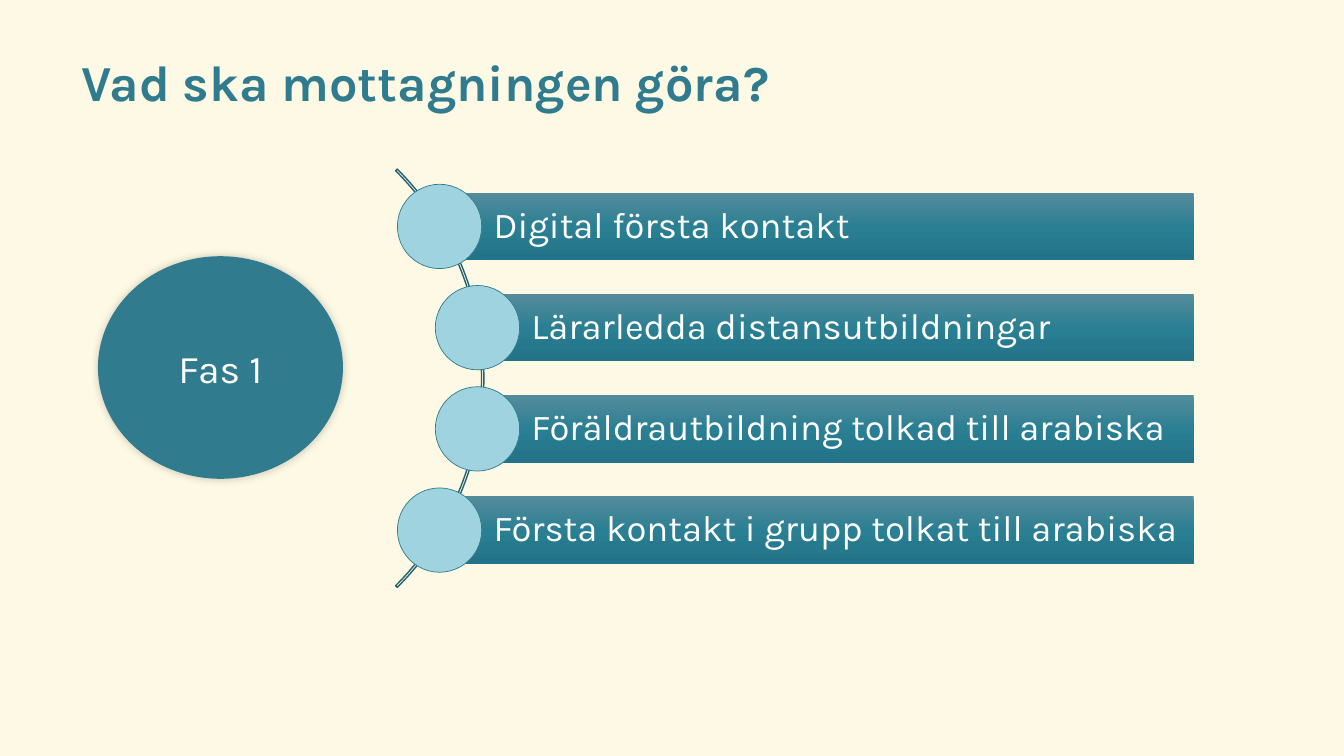
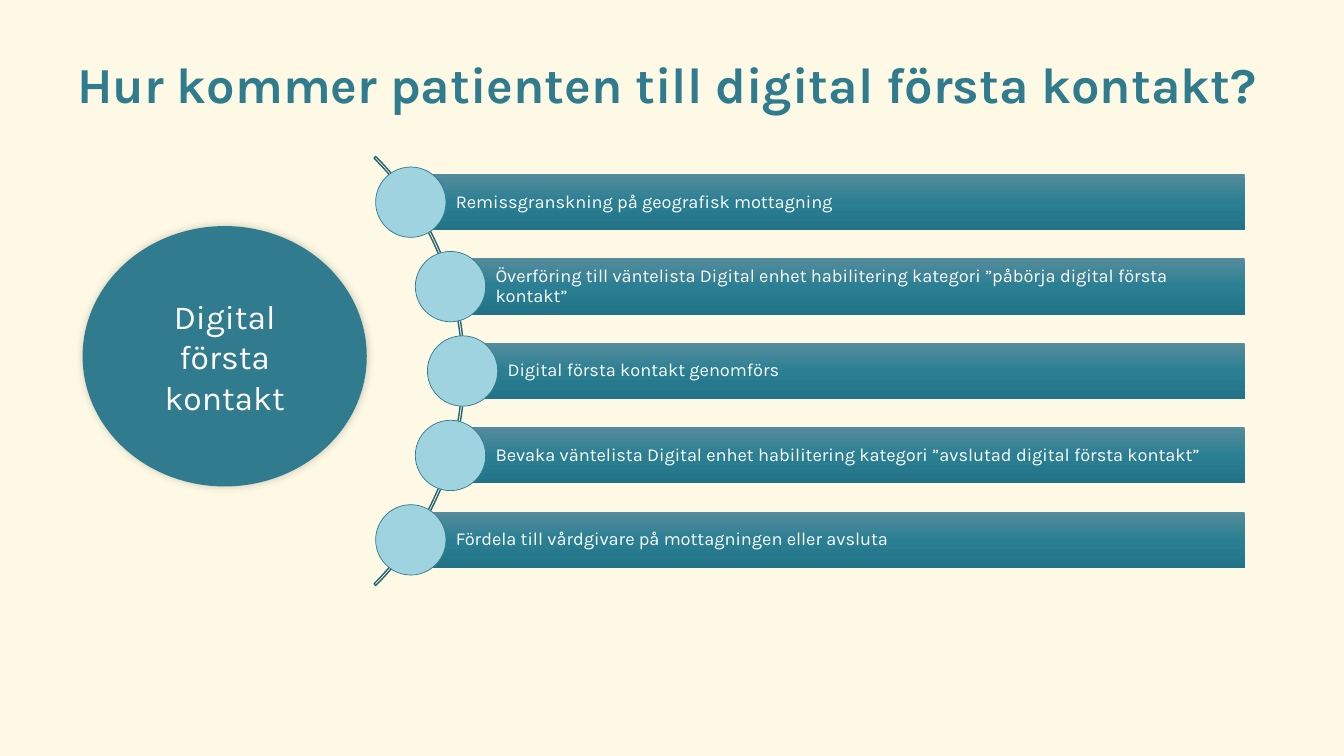
from copy import deepcopy
from math import sqrt

from lxml import etree
from pptx import Presentation
from pptx.dml.color import RGBColor
from pptx.enum import shapes, text
from pptx.oxml import ns
from pptx.util import Pt

CREAM = RGBColor(0xFD, 0xF9, 0xE4)
TEAL = RGBColor(0x30, 0x7C, 0x8E)
DEEP = RGBColor(0x26, 0x63, 0x72)
PALE = RGBColor(0x9F, 0xD3, 0xDF)
WHITE = RGBColor(0xFF, 0xFF, 0xFF)
SHADES = [
    (0, RGBColor(0x55, 0x8C, 0x9C)),
    (0.5, RGBColor(0x2B, 0x7F, 0x93)),
    (1, RGBColor(0x22, 0x73, 0x87)),
]
KIND = shapes.MSO_SHAPE
ALIGN = text.PP_ALIGN

# Content: oval is left, top, width, height; arc is centre x, centre y, size
PAGES = [
    dict(
        title="Vad ska mottagningen göra?", spot=(51, 26.5),
        hub="Fas 1", oval=(70, 183, 175, 159), hubsize=28,
        arc=(134.4, 270.2, 422.6), tall=48.2, right=852.7, size=26,
        steps=[
            "Digital första kontakt",
            "Lärarledda distansutbildningar",
            "Föräldrautbildning tolkad till arabiska",
            "Första kontakt i grupp tolkat till arabiska",
        ],
    ),
    dict(
        title="Hur kommer patienten till digital första kontakt?", spot=(48, 28),
        hub="Digital första kontakt", oval=(59, 161.5, 203, 186), hubsize=24,
        arc=(115.2, 265, 433.4), tall=40.2, right=889, size=13,
        steps=[
            "Remissgranskning på geografisk mottagning",
            "Överföring till väntelista Digital enhet habilitering kategori "
            "”påbörja digital första kontakt”",
            "Digital första kontakt genomförs",
            "Bevaka väntelista Digital enhet habilitering kategori "
            "”avslutad digital första kontakt”",
            "Fördela till vårdgivare på mottagningen eller avsluta",
        ],
    ),
]


def write(shape, words, size, color=WHITE, bold=False, align=ALIGN.LEFT, lead=1.0):
    frame = shape.text_frame
    frame.word_wrap = True
    frame.auto_size = text.MSO_AUTO_SIZE.NONE
    frame.vertical_anchor = text.MSO_ANCHOR.MIDDLE
    para = frame.paragraphs[0]
    para.text = words
    para.alignment = align
    para.line_spacing = lead
    font = para.runs[0].font
    font.name, font.size, font.bold = "Karla", Pt(size), bold
    font.color.rgb = color


def draw(slide, kind, left, top, width, height, fill=None, line=None, weight=1):
    shape = slide.shapes.add_shape(kind, Pt(left), Pt(top), Pt(width), Pt(height))
    shape.shadow.inherit = False
    if fill is None:
        shape.fill.background()
    else:
        shape.fill.solid()
        shape.fill.fore_color.rgb = fill
    if line is None:
        shape.line.fill.background()
    else:
        shape.line.color.rgb = line
        shape.line.width = Pt(weight)
    return shape


deck = Presentation()
deck.slide_width, deck.slide_height = Pt(960), Pt(540)
back = deck.slide_master.background.fill
back.solid()
back.fore_color.rgb = CREAM

for page in PAGES:
    slide = deck.slides.add_slide(deck.slide_layouts[5])

    # Title
    title = slide.shapes.title
    title.left, title.top = [Pt(v) for v in page["spot"]]
    title.width, title.height = Pt(864), Pt(59)
    write(title, page["title"], 36, color=TEAL, bold=True, lead=1.1)

    # Hub with a soft shadow
    hub = draw(slide, KIND.OVAL, *page["oval"], fill=TEAL)
    write(hub, page["hub"], page["hubsize"], align=ALIGN.CENTER)
    glow = etree.SubElement(
        hub._element.spPr.find(ns.qn("a:effectLst")), ns.qn("a:outerShdw"),
        blurRad=str(Pt(6)), dist="0", dir="13500000", algn="ctr", rotWithShape="0")
    black = etree.SubElement(glow, ns.qn("a:srgbClr"), val="000000")
    etree.SubElement(black, ns.qn("a:alpha"), val="20000")

    # Arc
    midx, midy, span = page["arc"]
    arc = draw(slide, KIND.BLOCK_ARC, midx - span / 2, midy - span / 2,
               span, span, line=DEEP)
    for i, value in enumerate((189, 27, 0.004)):
        arc.adjustments[i] = value

    # Steps: bars that start on the arc, each with a dot
    tall, size = page["tall"], page["size"]
    dot = tall * 1.25
    radius = span / 2 - 1.5
    for i, step in enumerate(page["steps"]):
        drop = (i - (len(page["steps"]) - 1) / 2) * tall * 1.5
        x, y = midx + sqrt(radius ** 2 - drop ** 2), midy + drop
        bar = draw(slide, KIND.RECTANGLE, x, y - tall / 2, page["right"] - x, tall)
        bar.fill.gradient()
        bar.fill.gradient_angle = 270
        stops = bar._element.spPr.find(".//" + ns.qn("a:gsLst"))
        stops.insert(1, deepcopy(stops[0]))
        for stop, (place, shade) in zip(bar.fill.gradient_stops, SHADES):
            stop.position = place
            stop.color.rgb = shade
        write(bar, step, size, lead=0.9)
        frame = bar.text_frame
        frame.margin_left = Pt(tall * 0.8)
        frame.margin_top = frame.margin_right = frame.margin_bottom = Pt(size / 5)
        draw(slide, KIND.OVAL, x - dot / 2, y - dot / 2, dot, dot,
             fill=PALE, line=TEAL, weight=0.5)

deck.save("out.pptx")
